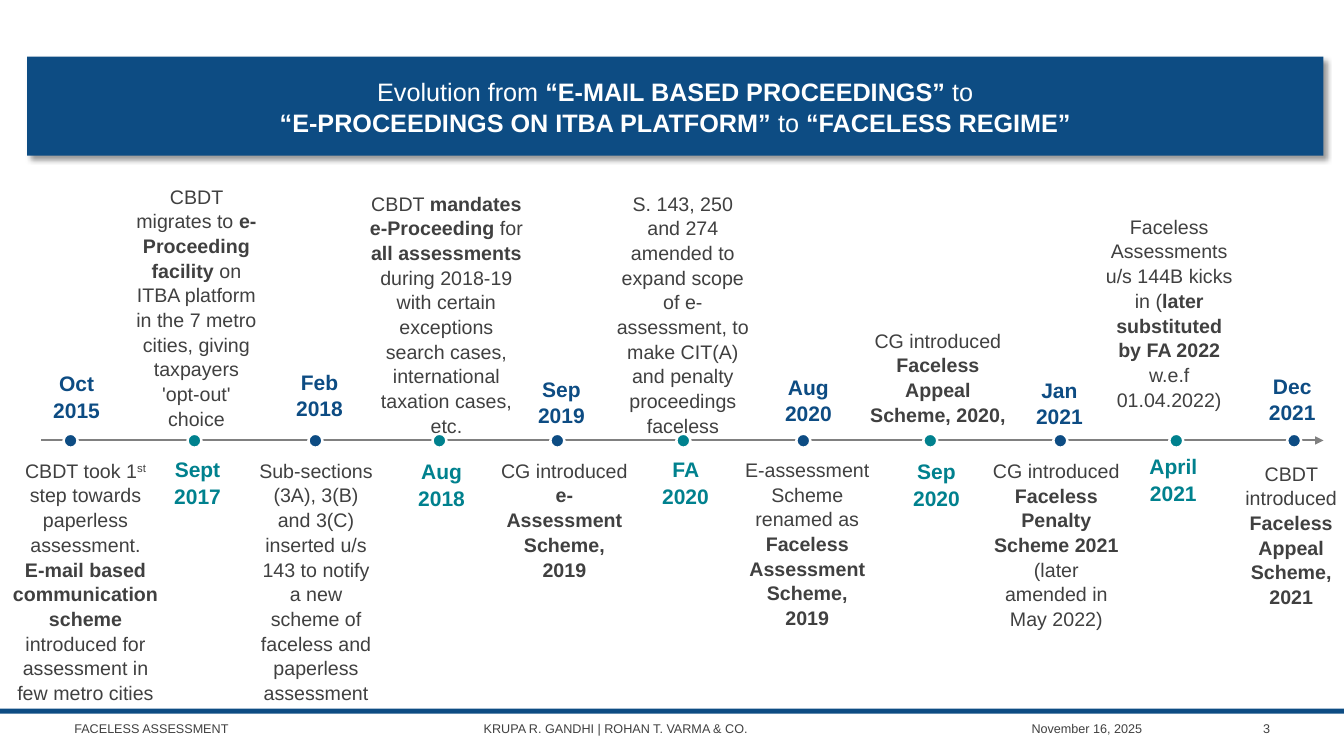
import pptx
import pptx.util
import pptx.dml.color
import pptx.enum.shapes
import pptx.enum.text
import pptx.oxml

Pt = pptx.util.Pt
Shape = pptx.enum.shapes.MSO_SHAPE
Align = pptx.enum.text.PP_ALIGN
Anchor = pptx.enum.text.MSO_ANCHOR
NS = 'xmlns:a="http://schemas.openxmlformats.org/drawingml/2006/main"'
NAVY, TEAL, GREY, WHITE = "0D4C83", "00818E", "404040", "FFFFFF"


def color(code):
    return pptx.dml.color.RGBColor.from_string(code)


def write(shape, text, size=14, ink=GREY, align=Align.CENTER,
          anchor=Anchor.TOP, space=1.05, tab=None):
    """Fill a shape with text; *stars* mark bold and ^carets^ superscript."""
    frame = shape.text_frame
    frame.word_wrap = True
    frame.vertical_anchor = anchor
    for i, line in enumerate(text.split("\n")):
        para = frame.add_paragraph() if i else frame.paragraphs[0]
        para.alignment = align
        para.line_spacing = space
        if tab:
            para._p.get_or_add_pPr().append(pptx.oxml.parse_xml(
                f'<a:tabLst {NS}><a:tab pos="{Pt(tab)}" algn="l"/></a:tabLst>'))
        for j, part in enumerate(line.split("*")):
            for k, piece in enumerate(part.split("^")):
                if not piece:
                    continue
                run = para.add_run()
                run.text = piece
                run.font.name = "Arial"
                run.font.size = Pt(size)
                run.font.bold = j % 2 == 1
                run.font.color.rgb = color(ink)
                if k % 2:
                    run.font._element.set("baseline", "30000")


deck = pptx.Presentation()
deck.slide_width, deck.slide_height = Pt(960), Pt(540)
slide = deck.slides.add_slide(deck.slide_layouts[6])
shapes = slide.shapes

# Footer
rule = shapes.add_shape(Shape.RECTANGLE, 0, Pt(506.2), Pt(960), Pt(3.6))
rule.shadow.inherit = False
rule.fill.solid()
rule.fill.fore_color.rgb = color(NAVY)
rule.line.fill.background()

for left, width, text, align, tab in [
    (46, 544, "FACELESS ASSESSMENT\tKRUPA R. GANDHI | ROHAN T. VARMA & CO.",
     Align.LEFT, 292.4),
    (599, 224, "November 16, 2025", Align.RIGHT, None),
    (831.6, 82.8, "3", Align.RIGHT, None),
]:
    box = shapes.add_textbox(Pt(left), Pt(506.2), Pt(width), Pt(28.8))
    write(box, text, size=9, align=align, anchor=Anchor.MIDDLE, space=1, tab=tab)

# Time line
axis = shapes.add_connector(pptx.enum.shapes.MSO_CONNECTOR.STRAIGHT,
                            Pt(29.5), Pt(314.6), Pt(945.4), Pt(314.6))
axis.line.color.rgb = color("808080")
axis.line.width = Pt(1.5)
axis.line._get_or_add_ln().append(
    pptx.oxml.parse_xml(f'<a:tailEnd {NS} type="triangle"/>'))
axis._element.spPr.append(pptx.oxml.parse_xml(f"<a:effectLst {NS}/>"))

# Dot left; date, its center and top; note left, top, width, lines, text
events = [
    (45.4, "Oct 2015", 54.7, 260.6, 1.4, 323.3, 119.5, 10,
     "CBDT took 1^st^ step towards paperless assessment.\n"
     "*E-mail based communication scheme* introduced for assessment in "
     "few metro cities"),
    (133.9, "Sept 2017", 141.1, 321.8, 87.8, 127.4, 105.1, 10,
     "CBDT migrates to *e-Proceeding facility* on ITBA platform in the "
     "7 metro cities, giving taxpayers 'opt-out' choice"),
    (220.3, "Feb 2018", 228.2, 259.2, 175, 323.3, 101.5, 10,
     "Sub-sections (3A), 3(B) and 3(C) inserted u/s 143 to notify a new "
     "scheme of faceless and paperless assessment"),
    (308.9, "Aug 2018", 315.4, 323.3, 257, 132.5, 123.8, 10,
     "CBDT *mandates e-Proceeding* for *all assessments* during 2018-19 with "
     "certain exceptions search cases, international taxation cases, etc."),
    (393.1, "Sep 2019", 401, 264.2, 349.9, 323.3, 106.5, 5,
     "CG introduced *e-Assessment Scheme, 2019*"),
    (483.1, "FA 2020", 489.6, 321.8, 432.7, 132.5, 110.2, 10,
     "S. 143, 250 and 274 amended to expand scope of e-assessment, to make "
     "CIT(A) and penalty proceedings faceless"),
    (568.8, "Aug 2020", 577.4, 262.8, 523.4, 322.6, 106.5, 7,
     "E-assessment Scheme renamed as *Faceless Assessment Scheme, 2019*"),
    (659.5, "Sep 2020", 668.9, 323.3, 612, 230.4, 115.9, 4,
     "CG introduced *Faceless Appeal Scheme, 2020,*"),
    (752.4, "Jan 2021", 756.7, 265, 701.3, 323.3, 106.5, 7,
     "CG introduced *Faceless Penalty Scheme 2021* (later amended in May 2022)"),
    (835.2, "April 2021", 838.1, 319.7, 780.5, 149, 109.4, 8,
     "Faceless Assessments u/s 144B kicks in (*later substituted by FA 2022* "
     "w.e.f 01.04.2022)"),
    (919.4, "Dec 2021", 923, 262.1, 871.2, 325.4, 102.2, 6,
     "CBDT introduced *Faceless Appeal Scheme, 2021*"),
]
for i, (spot, date, mid, high, left, top, width, lines, note) in enumerate(events):
    tone = TEAL if i % 2 else NAVY
    box = shapes.add_textbox(Pt(left), Pt(top), Pt(width), Pt(17 * lines + 7))
    write(box, note)
    dot = shapes.add_shape(Shape.OVAL, Pt(spot), Pt(309.8), Pt(10), Pt(10))
    dot.shadow.inherit = False
    dot.fill.solid()
    dot.fill.fore_color.rgb = color(tone)
    dot.line.color.rgb = color(WHITE)
    dot.line.width = Pt(1.75)
    label = shapes.add_textbox(Pt(mid - 34), Pt(high), Pt(68), Pt(44))
    write(label, f"*{date}*", size=15, ink=tone)

# Title banner
banner = shapes.add_shape(Shape.RECTANGLE, Pt(19.4), Pt(40.5), Pt(925.9), Pt(70.6))
banner.fill.solid()
banner.fill.fore_color.rgb = color(NAVY)
banner.line.fill.background()
banner._element.spPr.append(pptx.oxml.parse_xml(
    f'<a:effectLst {NS}><a:outerShdw blurRad="{Pt(4)}" dist="{Pt(3)}" '
    'dir="2700000" algn="tl" rotWithShape="0"><a:srgbClr val="000000">'
    '<a:alpha val="40000"/></a:srgbClr></a:outerShdw></a:effectLst>'))
write(banner, "Evolution from *“E-MAIL BASED PROCEEDINGS”* to\n"
      "*“E-PROCEEDINGS ON ITBA PLATFORM”* to *“FACELESS REGIME”*",
      size=18, ink=WHITE, anchor=Anchor.MIDDLE)

deck.save("out.pptx")
